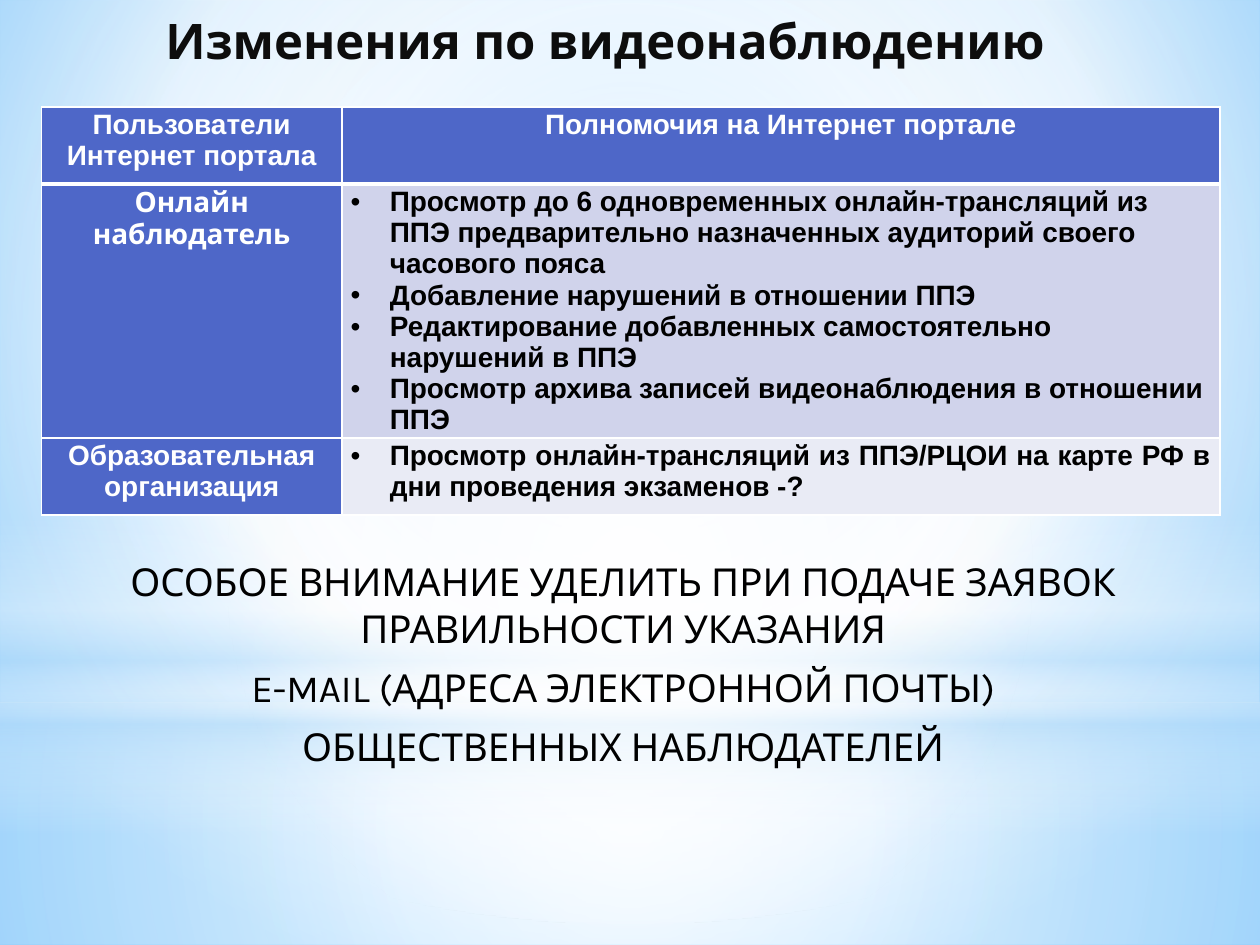
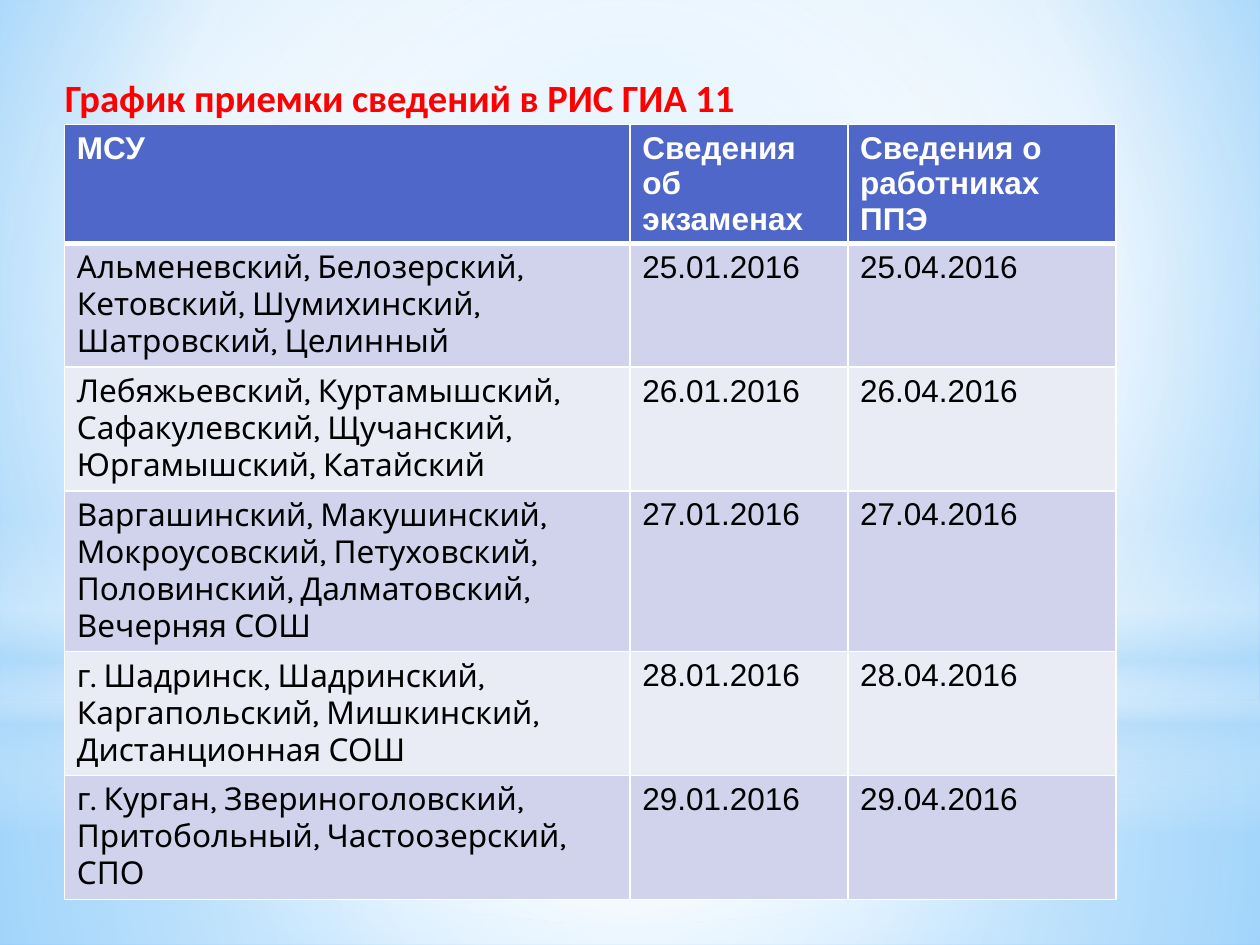
import pptx
import pptx.dml.color
import pptx.enum.shapes
import pptx.enum.text
import pptx.oxml
import pptx.oxml.ns
import pptx.util
from lxml import etree

Cm, Pt = pptx.util.Cm, pptx.util.Pt
qn = pptx.oxml.ns.qn
ALIGN = pptx.enum.text.PP_ALIGN
SHAPE = pptx.enum.shapes.MSO_SHAPE
rgb = pptx.dml.color.RGBColor.from_string
A_NS = pptx.oxml.ns.nsdecls("a")

WHITE, BLACK, RED, INK = "FFFFFF", "000000", "FF0000", "0D0D0D"
SKY, DEEP_SKY, HAZE = "9ED5FF", "5BB9FF", "B4DCFA"
HEADER_BLUE, BAND_DARK, BAND_LIGHT = "4E67C8", "D0D3EB", "E9EBF5"


def style_text(frame, font, size, color, bold=False, align=None):
    for paragraph in frame.paragraphs:
        paragraph.alignment = align
        for run in paragraph.runs:
            run.font.name = font
            run.font.size = Pt(size)
            run.font.bold = bold
            run.font.color.rgb = rgb(color)


def place(holder, left, top, width, height):
    """Move a placeholder and let its text start at the top at full size."""
    holder.left, holder.top = Cm(left), Cm(top)
    holder.width, holder.height = Cm(width), Cm(height)
    holder.text_frame.auto_size = pptx.enum.text.MSO_AUTO_SIZE.NONE
    holder.text_frame.vertical_anchor = pptx.enum.text.MSO_ANCHOR.TOP
    holder.text_frame.word_wrap = True


deck = pptx.Presentation()
deck.slide_width, deck.slide_height = Cm(25.4), Cm(19.05)
master = deck.slide_master
video_slide = deck.slides.add_slide(deck.slide_layouts[1])
schedule_slide = deck.slides.add_slide(deck.slide_layouts[5])

# Shared backdrop: gradient background and four translucent layers on the master
CENTER = '<a:path path="circle"><a:fillToRect l="50000" t="50000" r="50000" b="50000"/></a:path>'
UPPER = '<a:path path="circle"><a:fillToRect l="20000" t="10000" r="20000" b="60000"/></a:path>'
DOWN = '<a:lin ang="5400000" scaled="0"/>'
backdrop = [
    (None, None, UPPER, [(0, SKY, 100), (60, WHITE, 100), (100, DEEP_SKY, 100)]),
    (SHAPE.RECTANGLE, (14.17, 4.88), CENTER, [(0, WHITE, 91), (37, WHITE, 76), (100, HAZE, 79)]),
    (SHAPE.RECTANGLE, (0, 14.17), CENTER, [(0, WHITE, 89), (48, WHITE, 62), (100, HAZE, 79)]),
    (SHAPE.RECTANGLE, (10.46, 6.35), DOWN, [(0, WHITE, 0), (29, WHITE, 30), (45, HAZE, 40),
                                            (55, WHITE, 26), (65, HAZE, 60), (100, WHITE, 0)]),
    (SHAPE.OVAL, (4.45, 14.17), CENTER, [(0, WHITE, 100), (56, WHITE, 0)]),
]
for order, (kind, span, direction, stops) in enumerate(backdrop):
    if kind is None:
        master.background.fill.solid()
        painted = master.element.find(".//" + qn("p:bgPr"))
    else:
        top, height = span
        layer = video_slide.shapes.add_shape(kind, 0, Cm(top), deck.slide_width, Cm(height))
        layer.shadow.inherit = False
        layer.line.fill.background()
        layer.fill.solid()
        painted = layer.element
        painted.nvSpPr.cNvPr.set("id", str(20 + order))
        master.shapes.element.insert(1 + order, painted)
    stop_xml = "".join(
        f'<a:gs pos="{position * 1000}"><a:srgbClr val="{color}">'
        f'<a:alpha val="{opacity * 1000}"/></a:srgbClr></a:gs>'
        for position, color, opacity in stops)
    solid = painted.find(".//" + qn("a:solidFill"))
    solid.getparent().replace(solid, pptx.oxml.parse_xml(
        f'<a:gradFill {A_NS} rotWithShape="1"><a:gsLst>{stop_xml}</a:gsLst>{direction}</a:gradFill>'))

# Titles
heading = video_slide.shapes.title
place(heading, 0.89, 0.08, 22.61, 3.18)
heading.text_frame.text = "Изменения по видеонаблюдению"
style_text(heading.text_frame, "Karla", 28, INK, True, ALIGN.CENTER)

heading = schedule_slide.shapes.title
place(heading, 0.89, 0.33, 23.19, 16.79)
heading.text_frame.margin_left, heading.text_frame.margin_top = Cm(0.42), Cm(1.17)
heading.text_frame.text = "График приемки сведений в РИС ГИА 11"
style_text(heading.text_frame, "Calibri", 22, RED, True, ALIGN.LEFT)

# Reminder below the video table
reminder = video_slide.placeholders[1]
place(reminder, 1.5, 11.13, 22, 6.68)
reminder.text_frame.text = "\n".join([
    "ОСОБОЕ ВНИМАНИЕ УДЕЛИТЬ ПРИ ПОДАЧЕ ЗАЯВОК ПРАВИЛЬНОСТИ УКАЗАНИЯ",
    "E-MAIL (АДРЕСА ЭЛЕКТРОННОЙ ПОЧТЫ)",
    "ОБЩЕСТВЕННЫХ НАБЛЮДАТЕЛЕЙ",
])
style_text(reminder.text_frame, "Karla", 22, BLACK, align=ALIGN.CENTER)
for line in reminder.text_frame.paragraphs:
    line.space_before, line.space_after = Pt(4.4), Pt(3)
    properties = line._p.get_or_add_pPr()
    properties.set("marL", str(Cm(0.13)))
    properties.set("indent", "0")
    etree.SubElement(properties, qn("a:buNone"))

# Tables
permissions = [
    ["Пользователи Интернет портала", "Полномочия на Интернет портале"],
    ["Онлайн наблюдатель", "\n".join([
        "Просмотр до 6 одновременных онлайн-трансляций из ППЭ предварительно "
        "назначенных аудиторий своего часового пояса",
        "Добавление нарушений в отношении ППЭ",
        "Редактирование добавленных самостоятельно нарушений в ППЭ",
        "Просмотр архива записей видеонаблюдения в отношении ППЭ",
    ])],
    ["Образовательная организация",
     "Просмотр онлайн-трансляций из ППЭ/РЦОИ на карте РФ в дни проведения экзаменов -?"],
]
districts = [
    "Альменевский, Белозерский, Кетовский, Шумихинский, Шатровский, Целинный",
    "Лебяжьевский, Куртамышский, Сафакулевский, Щучанский, Юргамышский, Катайский",
    "Варгашинский, Макушинский, Мокроусовский, Петуховский, Половинский, Далматовский, Вечерняя СОШ",
    "г. Шадринск, Шадринский, Каргапольский, Мишкинский, Дистанционная СОШ",
    "г. Курган, Звериноголовский, Притобольный, Частоозерский, СПО",
]
schedule = [["МСУ", "Сведения об экзаменах", "Сведения о работниках ППЭ"]]
schedule += [[names, f"{day}.01.2016", f"{day}.04.2016"] for day, names in enumerate(districts, 25)]

tables = []
for slide, rows, corner, widths, heights, insets, size in [
    (video_slide, permissions, (0.84, 2.16), [6.05, 17.7], [1.55, 5.08, 1.55], (0.18, 0.05), 16),
    (schedule_slide, schedule, (1.3, 2.51), [11.4, 4.39, 5.41],
     [2.36, 2.49, 2.49, 3.23, 2.49, 2.49], (0.25, 0.13), 18),
]:
    table = slide.shapes.add_table(len(rows), len(widths), Cm(corner[0]), Cm(corner[1]),
                                   Cm(sum(widths)), Cm(sum(heights))).table
    tables.append(table)
    for column, width in zip(table.columns, widths):
        column.width = Cm(width)
    for r, (row, height) in enumerate(zip(rows, heights)):
        table.rows[r].height = Cm(height)
        for c, words in enumerate(row):
            cell = table.cell(r, c)
            cell.text_frame.text = words
            cell.margin_left = cell.margin_right = Cm(insets[0])
            cell.margin_top = cell.margin_bottom = Cm(insets[1])
            cell.fill.solid()
            cell.fill.fore_color.rgb = rgb(HEADER_BLUE if r == 0 else BAND_DARK if r % 2 else BAND_LIGHT)
            style_text(cell.text_frame, "Arial", size, BLACK if r else WHITE, r == 0)
            borders = {"L": 1, "R": 1, "T": 3 if r == 1 else 1, "B": 3 if r == 0 else 1}
            for index, (side, weight) in enumerate(borders.items()):
                cell._tc.get_or_add_tcPr().insert(index, pptx.oxml.parse_xml(
                    f'<a:ln{side} {A_NS} w="{Pt(weight)}"><a:solidFill>'
                    f'<a:srgbClr val="{WHITE}"/></a:solidFill></a:ln{side}>'))

permission_table, schedule_table = tables
for r in range(1, len(schedule)):
    style_text(schedule_table.cell(r, 0).text_frame, "Karla", 18, BLACK)

style_text(permission_table.cell(0, 1).text_frame, "Arial", 16, WHITE, True, ALIGN.CENTER)
for r, font in enumerate(["Arial", "Karla", "Arial"]):
    user = permission_table.cell(r, 0)
    user.fill.fore_color.rgb = rgb(HEADER_BLUE)
    style_text(user.text_frame, font, 16, WHITE, True, ALIGN.CENTER)
for r, align in [(1, ALIGN.LEFT), (2, ALIGN.JUSTIFY)]:
    rights = permission_table.cell(r, 1).text_frame
    style_text(rights, "Arial", 16, BLACK, True, align)
    for right in rights.paragraphs:
        properties = right._p.get_or_add_pPr()
        properties.set("marL", str(Cm(0.79)))
        properties.set("indent", str(-Cm(0.79)))
        bullet_color = etree.SubElement(properties, qn("a:buClr"))
        etree.SubElement(bullet_color, qn("a:srgbClr"), val=BLACK)
        etree.SubElement(properties, qn("a:buFont"), typeface="Arial")
        etree.SubElement(properties, qn("a:buChar"), char="•")

deck.save("out.pptx")
